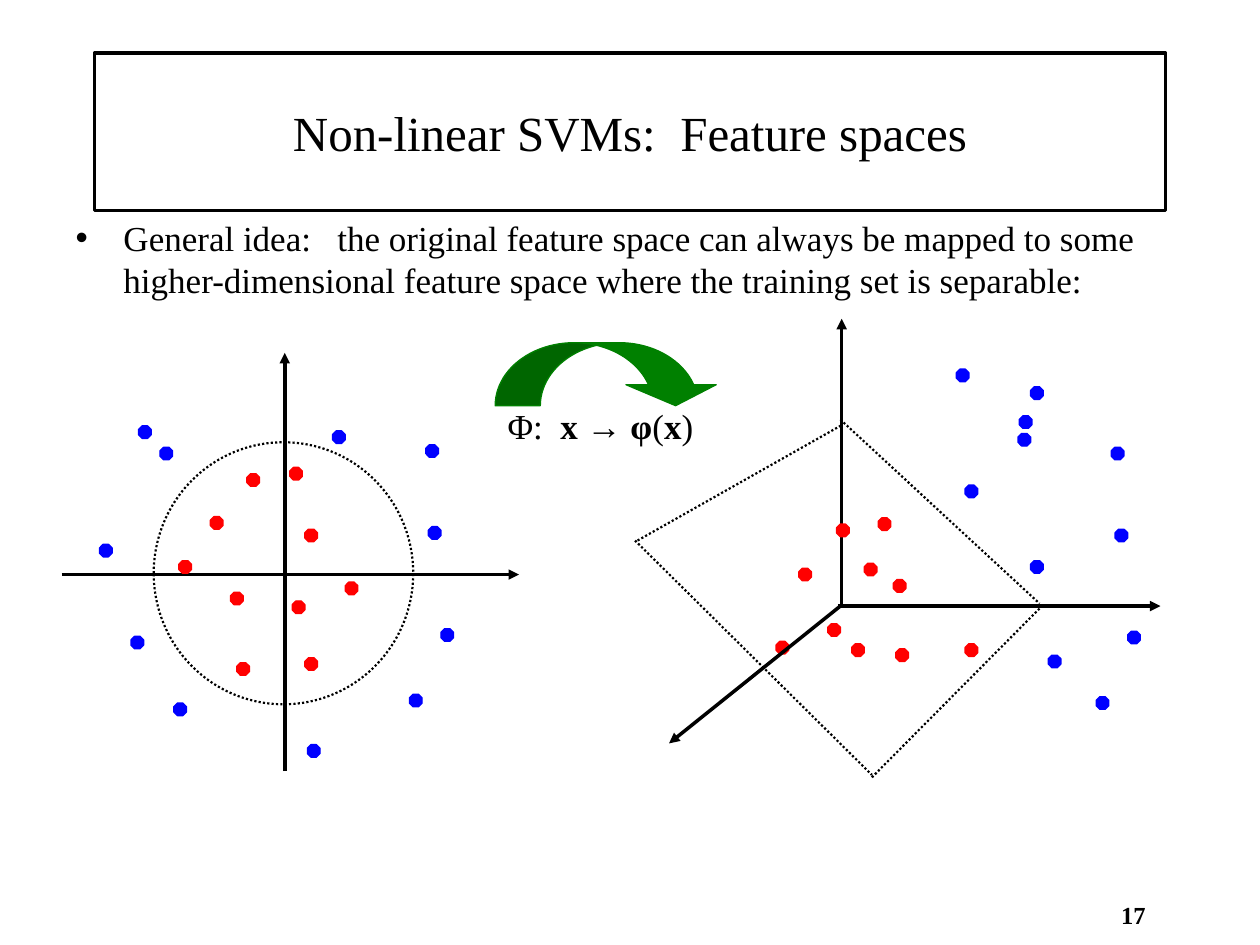
import dataclasses
import typing

import pptx
import pptx.dml.color
import pptx.enum.dml
import pptx.enum.shapes
import pptx.enum.text
import pptx.oxml.ns
import pptx.util
from lxml import etree

Inches = pptx.util.Inches
Pt = pptx.util.Pt
KIND = pptx.enum.shapes.MSO_SHAPE
ALIGN = pptx.enum.text.PP_ALIGN
ANCHOR = pptx.enum.text.MSO_ANCHOR
BLACK, WHITE, RED, BLUE, GREEN = "000000", "FFFFFF", "FF0000", "0000FF", "008000"
DOT = 0.1
Point = tuple[float, float]


@dataclasses.dataclass
class Line:
    start: Point
    end: Point
    arrow: bool = True


@dataclasses.dataclass
class Dots:
    color: str
    spots: list[Point]


@dataclasses.dataclass
class Run:
    text: str
    bold: bool = False


def color(code: str) -> pptx.dml.color.RGBColor:
    return pptx.dml.color.RGBColor.from_string(code)


def apply(item: typing.Any, values: dict) -> None:
    for name, value in values.items():
        setattr(item, name, value)


def place(item: typing.Any, left: float, top: float, width: float, height: float) -> None:
    apply(item, {"left": Inches(left), "top": Inches(top),
                 "width": Inches(width), "height": Inches(height)})


def stroke(item: typing.Any, code: str, width: float, dotted: bool = False) -> None:
    item.line.color.rgb = color(code)
    item.line.width = Pt(width)
    if dotted:
        item.line.dash_style = pptx.enum.dml.MSO_LINE.ROUND_DOT


def child(parent: typing.Any, tag: str, **values: str) -> None:
    etree.SubElement(parent, pptx.oxml.ns.qn(tag), values)


def write(item: typing.Any, runs: list[Run], size: float, frame: dict, para: dict) -> typing.Any:
    """Fill the first paragraph of an item and return it."""
    apply(item.text_frame, {"word_wrap": True, **frame})
    first = item.text_frame.paragraphs[0]
    apply(first, para)
    for part in runs:
        run = first.add_run()
        run.text = part.text
        apply(run.font, {"name": "Times New Roman", "size": Pt(size), "bold": part.bold})
        run.font.color.rgb = color(BLACK)
    return first


def add_shape(slide: typing.Any, kind: typing.Any, box: tuple, fill: str | None,
              edge: str, width: float, dotted: bool = False) -> typing.Any:
    shape = slide.shapes.add_shape(kind, *map(Inches, box))
    shape.shadow.inherit = False
    if fill:
        shape.fill.solid()
        shape.fill.fore_color.rgb = color(fill)
    else:
        shape.fill.background()
    stroke(shape, edge, width, dotted)
    return shape


def add_line(slide: typing.Any, line: Line) -> None:
    """Draw a solid axis with an arrowhead, or a dotted edge without one."""
    wire = slide.shapes.add_connector(
        pptx.enum.shapes.MSO_CONNECTOR.STRAIGHT, *map(Inches, line.start + line.end))
    stroke(wire, BLACK, 2 if line.arrow else 1.25, not line.arrow)
    if line.arrow:
        child(wire.line._get_or_add_ln(), "a:tailEnd", type="triangle")
    child(wire._element.spPr, "a:effectLst")


def add_dots(slide: typing.Any, dots: Dots) -> None:
    for left, top in dots.spots:
        shape = add_shape(slide, KIND.OCTAGON, (left, top, DOT, DOT),
                          dots.color, dots.color, 0.75)
        shape.adjustments[0] = 0.29


PLANE = [
    Line((2.26, 6.12), (2.26, 2.8)),
    Line((0.49, 4.56), (4.12, 4.56)),
    Dots(RED, [(2.3, 3.71), (1.67, 4.1), (1.83, 4.7), (2.42, 5.22), (1.96, 3.76),
               (1.42, 4.45), (1.88, 5.26), (2.42, 4.2), (2.74, 4.62), (2.32, 4.77)]),
    Dots(BLUE, [(3.4, 4.18), (3.25, 5.51), (0.79, 4.32), (2.44, 5.91), (3.5, 4.99),
                (1.38, 5.58), (1.04, 5.05), (1.1, 3.38), (2.64, 3.42), (1.27, 3.55),
                (3.38, 3.53)]),
]
SPACE = [
    Line((6.68, 4.79), (6.68, 2.53)),
    Line((6.65, 4.81), (9.21, 4.81)),
    Dots(RED, [(6.97, 4.11), (6.34, 4.51), (6.76, 5.11), (7.66, 5.11), (6.64, 4.16),
               (6.86, 4.47), (7.11, 5.15), (7.09, 4.6), (6.57, 4.95), (6.16, 5.09)]),
    Dots(BLUE, [(8.85, 4.2), (8.7, 5.53), (8.18, 3.07), (8.18, 4.45), (8.95, 5.01),
                (7.66, 3.85), (8.32, 5.2), (8.09, 3.3), (8.08, 3.44), (7.59, 2.93),
                (8.82, 3.55)]),
    Line((6.67, 4.81), (5.31, 5.9)),
    Line((6.67, 3.33), (8.25, 4.79), False),
    Line((6.92, 6.17), (8.25, 4.83), False),
    Line((5.06, 4.29), (6.67, 3.38), False),
    Line((5.04, 4.29), (6.92, 6.15), False),
]


def add_graph(slide: typing.Any, parts: list[Line | Dots]) -> None:
    for part in parts:
        if isinstance(part, Line):
            add_line(slide, part)
        else:
            add_dots(slide, part)


def add_heads(slide: typing.Any) -> None:
    """Fill the title and body placeholders."""
    fit = {"auto_size": pptx.enum.text.MSO_AUTO_SIZE.NONE}
    title, body = slide.placeholders
    place(title, 0.75, 0.42, 8.5, 1.25)
    stroke(title, BLACK, 2)
    write(title, [Run("Non-linear SVMs:  Feature spaces")], 28,
          {**fit, "vertical_anchor": ANCHOR.MIDDLE}, {"alignment": ALIGN.CENTER})
    place(body, 0.5, 1.67, 9, 5.5)
    idea = ("General idea:   the original feature space can always be mapped to some "
            "higher-dimensional feature space where the training set is separable:")
    first = write(body, [Run(idea)], 20, {**fit, "vertical_anchor": ANCHOR.TOP},
                  {"alignment": ALIGN.LEFT, "space_before": Pt(4)})
    props = first._p.get_or_add_pPr()
    props.set("marL", str(Inches(0.38)))
    props.set("indent", str(Inches(-0.38)))
    child(props, "a:buChar", char="•")


def add_map(slide: typing.Any) -> None:
    """Draw the curved arrow and the mapping formula."""
    arrow = add_shape(slide, KIND.CURVED_DOWN_ARROW, (3.93, 2.72, 1.79, 0.5),
                      GREEN, GREEN, 0.75)
    for index, value in enumerate((0.717, 1.433, 0.333)):
        arrow.adjustments[index] = value
    label = slide.shapes.add_textbox(*map(Inches, (3.93, 3.16, 1.84, 0.43)))
    runs = [Run("Φ:  "), Run("x → φ", True), Run("("), Run("x", True), Run(")")]
    write(label, runs, 20, {}, {"space_before": Pt(10)})


def add_page(slide: typing.Any) -> None:
    page = slide.shapes.add_textbox(*map(Inches, (8.83, 7.14, 0.33, 0.36)))
    page.fill.solid()
    page.fill.fore_color.rgb = color(WHITE)
    sides = ("left", "top", "right", "bottom")
    write(page, [Run("17", True)], 14, {f"margin_{side}": 0 for side in sides},
          {"alignment": ALIGN.CENTER})


def main() -> None:
    deck = pptx.Presentation()
    apply(deck, {"slide_width": Inches(10), "slide_height": Inches(7.5)})
    slide = deck.slides.add_slide(deck.slide_layouts[1])
    add_page(slide)
    add_heads(slide)
    add_graph(slide, PLANE)
    add_shape(slide, KIND.OVAL, (1.22, 3.51, 2.06, 2.08), None, BLACK, 1.25, True)
    add_graph(slide, SPACE)
    add_map(slide)
    deck.save("out.pptx")


if __name__ == "__main__":
    main()
